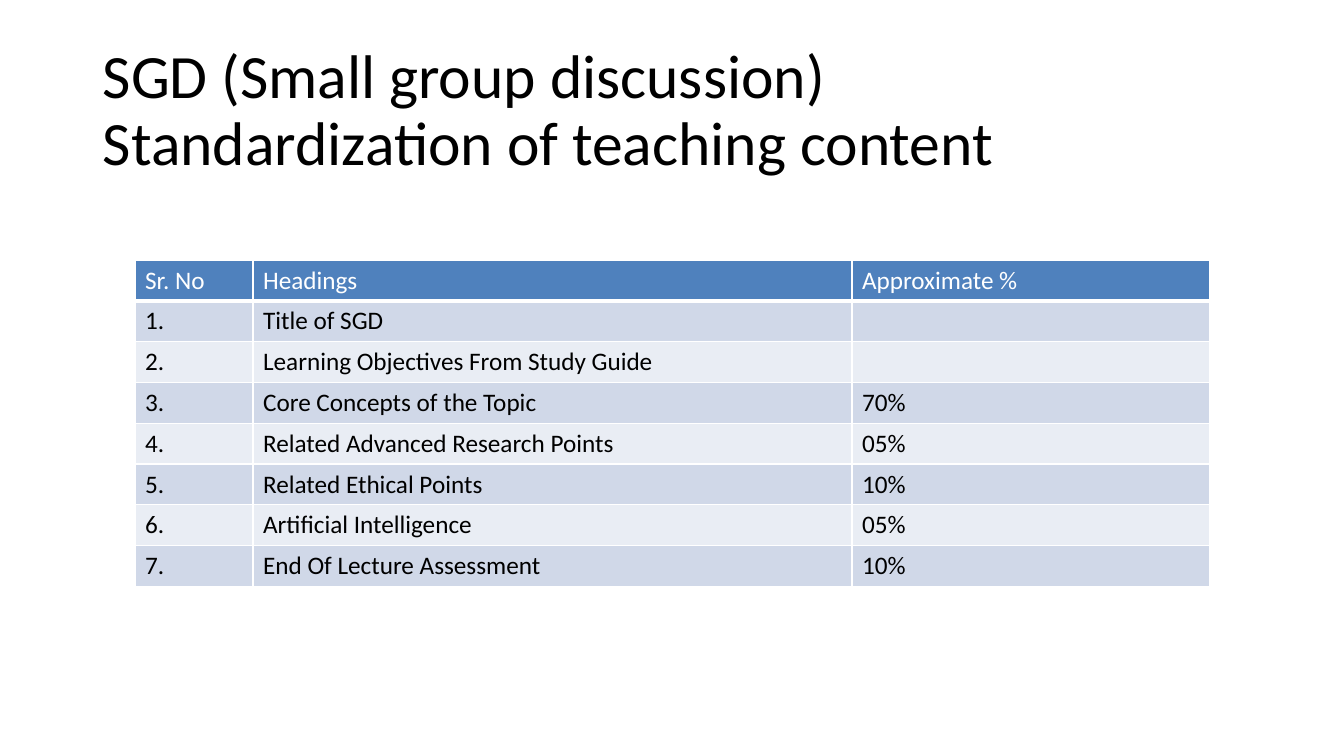
from dataclasses import dataclass

from lxml.etree import SubElement
from pptx import Presentation
from pptx.dml.color import RGBColor
from pptx.enum.text import MSO_ANCHOR
from pptx.oxml.ns import qn
from pptx.util import Inches, Pt


@dataclass(frozen=True)
class Theme:
    font: str = "Calibri"
    title_size: int = 44
    table_size: int = 18
    text: str = "000000"
    header_text: str = "FFFFFF"
    header_fill: str = "4F81BD"
    band_fills: tuple = ("D0D8E8", "E9EDF4")
    border: str = "FFFFFF"
    border_width: int = 1
    header_rule_width: int = 3


TITLE = "SGD (Small group discussion) Standardization of teaching content"
HEADER = ("Sr. No", "Headings", "Approximate %")
TOPICS = (
    ("Title of SGD", ""),
    ("Learning Objectives From Study Guide", ""),
    ("Core Concepts of the Topic", "70%"),
    ("Related Advanced Research Points", "05%"),
    ("Related Ethical Points", "10%"),
    ("Artificial Intelligence", "05%"),
    ("End Of Lecture Assessment", "10%"),
)
COLUMN_WIDTHS = (1.17, 5.94, 3.55)
ROW_HEIGHT = 0.405


class SlideBuilder:
    def __init__(self, page, theme):
        self.page = page
        self.theme = theme

    def style(self, para, size, color):
        para.font.name = self.theme.font
        para.font.size = Pt(size)
        para.font.color.rgb = RGBColor.from_string(color)

    def title(self, text, left, top, width, height):
        box = self.page.shapes.add_textbox(
            Inches(left), Inches(top), Inches(width), Inches(height))
        frame = box.text_frame
        frame.word_wrap = True
        frame.vertical_anchor = MSO_ANCHOR.TOP
        frame.margin_left = Inches(0.45)
        frame.margin_top = Inches(0.1)
        frame.margin_right = frame.margin_bottom = 0
        para = frame.paragraphs[0]
        para.text = text
        para.line_spacing = Pt(47.5)
        para.space_before = Pt(7)
        self.style(para, self.theme.title_size, self.theme.text)

    def table(self, rows, left, top, column_widths, row_height):
        """Add a table whose first row is the header and whose other rows are banded."""
        theme = self.theme
        table = self.page.shapes.add_table(
            len(rows), len(column_widths), Inches(left), Inches(top),
            Inches(sum(column_widths)), Inches(row_height * len(rows))).table
        for column, width in zip(table.columns, column_widths):
            column.width = Inches(width)
        for row_index, values in enumerate(rows):
            table.rows[row_index].height = Inches(row_height)
            is_header = row_index == 0
            fill = theme.header_fill if is_header else theme.band_fills[(row_index - 1) % 2]
            color = theme.header_text if is_header else theme.text
            bottom = theme.header_rule_width if is_header else theme.border_width
            for column_index, value in enumerate(values):
                cell = table.cell(row_index, column_index)
                para = cell.text_frame.paragraphs[0]
                para.text = value
                self.style(para, theme.table_size, color)
                self.borders(cell, bottom)
                cell.fill.solid()
                cell.fill.fore_color.rgb = RGBColor.from_string(fill)

    def borders(self, cell, bottom_width):
        properties = cell._tc.get_or_add_tcPr()
        side_width = self.theme.border_width
        for side, width in (("L", side_width), ("R", side_width),
                            ("T", side_width), ("B", bottom_width)):
            line = SubElement(properties, qn(f"a:ln{side}"), w=str(Pt(width)))
            solid = SubElement(line, qn("a:solidFill"))
            SubElement(solid, qn("a:srgbClr"), val=self.theme.border)


def main():
    deck = Presentation()
    deck.slide_width = Inches(13.33)
    deck.slide_height = Inches(7.5)
    page = deck.slides.add_slide(deck.slide_layouts[6])
    builder = SlideBuilder(page, Theme())
    builder.title(TITLE, 0.57, 0.34, 11.11, 1.42)
    numbered = [(f"{number}.", *topic) for number, topic in enumerate(TOPICS, 1)]
    builder.table([HEADER, *numbered], 1.34, 2.58, COLUMN_WIDTHS, ROW_HEIGHT)
    # The header row carries the same weight as the body.
    page.shapes[-1].table.first_row = True
    deck.save("out.pptx")


if __name__ == "__main__":
    main()
